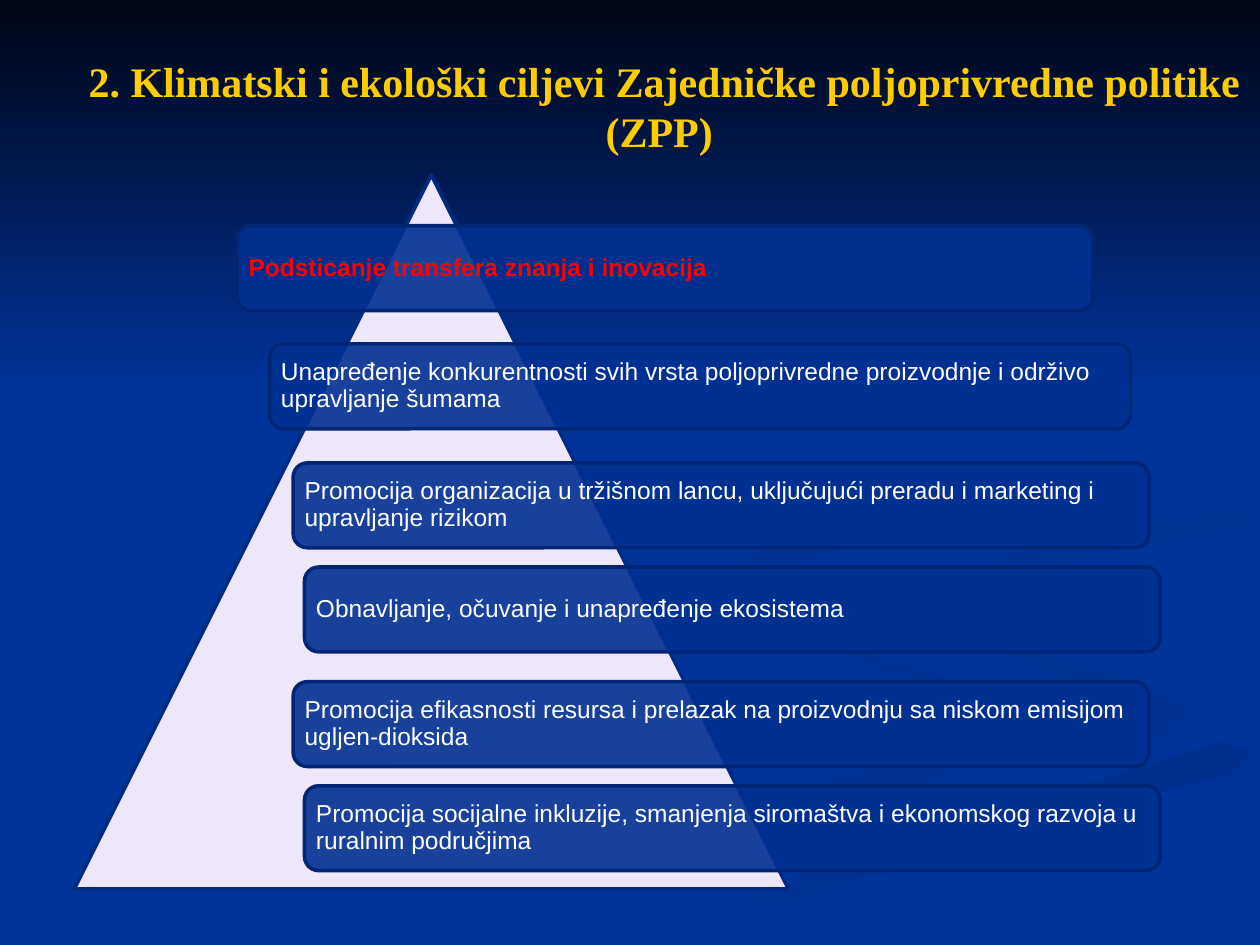
from collections import namedtuple
from itertools import pairwise
from math import hypot

from lxml.etree import SubElement
from pptx import Presentation
from pptx.dml.color import RGBColor
from pptx.enum.shapes import MSO_SHAPE as Preset
from pptx.enum.text import MSO_ANCHOR as Anchor, PP_ALIGN as Align
from pptx.oxml.ns import qn
from pptx.util import Pt

SLIDE_WIDTH, SLIDE_HEIGHT = 720, 540
SKY_HEIGHT = 222
PYRAMID_LEFT, PYRAMID_TOP, PYRAMID_SIZE = 42.5, 100, 408
GOAL_WIDTH, GOAL_HEIGHT, GOAL_INSET = 489, 48.5, 4.2
CURVE_STEPS = 6

COLORS = {
    "field": "003399", "night": "000514", "title": "FFCC00",
    "pyramid": "EEE7F9", "pyramid_edge": "002B82",
    "goal": "003091", "goal_edge": "002673",
    "text": "FFFFFF", "accent": "FF0000",
    "swirl": "003193", "band": "002F8C", "ripple": "003091", "wave": "002F8E",
}

Station = namedtuple("Station", "x y thickness")
Ribbon = namedtuple("Ribbon", "first last angle stations")
Goal = namedtuple("Goal", "left top text width color bold",
                  defaults=(GOAL_WIDTH, "text", False))

INNER_SWIRL = Ribbon("field", "swirl", 0, [
    (414, 331, 1), (416, 343, 5), (482, 371, 4), (555, 395, 5),
    (571, 410, 10), (520, 442, 14), (400, 474, 18), (245, 528, 22)])
OUTER_SWIRL = Ribbon("field", "swirl", 45, [
    (522, 334, 1), (530, 352, 6), (590, 376, 10),
    (655, 398, 12), (668, 416, 18), (646, 436, 1)])
LOWER_BAND = Ribbon("band", "field", 90, [
    (386, 530, 10), (470, 500, 18), (575, 467, 18), (715, 429, 20)])
PLAIN_RIBBON = Ribbon("field", "field", 0, [
    (370, 528, 16), (500, 478, 12), (650, 432, 12), (695, 403, 30),
    (650, 382, 16), (560, 354, 16), (543, 331, 36), (580, 307, 14), (715, 284, 10)])
RIPPLE = Ribbon("ripple", "field", 45, [
    (590, 354, 1), (570, 338, 12), (585, 322, 12), (640, 308, 12), (715, 296, 12)])
WAVE = Ribbon("wave", "field", 45, [
    (552, 170, 1), (615, 207, 4), (641, 243, 4), (605, 278, 8),
    (510, 300, 10), (445, 318, 14), (422, 337, 10), (442, 356, 1)])
RIBBONS = [INNER_SWIRL, OUTER_SWIRL, LOWER_BAND, PLAIN_RIBBON, RIPPLE, WAVE]

TITLE = "2. Klimatski i ekološki ciljevi Zajedničke poljoprivredne politike (ZPP) "
GOALS = [
    Goal(135.5, 129, "Podsticanje transfera znanja i inovacija", color="accent", bold=True),
    Goal(154, 196.5, "Unapređenje konkurentnosti svih vrsta poljoprivredne proizvodnje "
                     "i održivo upravljanje šumama", width=492),
    Goal(167.5, 264.5, "Promocija organizacija u tržišnom lancu, uključujući preradu "
                       "i marketing i upravljanje rizikom"),
    Goal(174, 324, "Obnavljanje, očuvanje i unapređenje ekosistema"),
    Goal(167.5, 389.5, "Promocija efikasnosti resursa i prelazak na proizvodnju "
                       "sa niskom emisijom ugljen-dioksida"),
    Goal(174, 449, "Promocija socijalne inkluzije, smanjenja siromaštva "
                   "i ekonomskog razvoja u ruralnim područjima"),
]


def rgb(name):
    """Return the named colour."""
    return RGBColor.from_string(COLORS[name])


def spline(before, start, end, after, t):
    """Return the Catmull-Rom value between start and end at t from 0 to 1."""
    return start + t / 2 * (end - before + t * (
        2 * before - 5 * start + 4 * end - after + t * (3 * (start - end) + after - before)))


def smooth(stations):
    """Return a smooth curve of stations through the given ones."""
    padded = [stations[0], *stations, stations[-1]]
    curve = []
    for index in range(len(stations) - 1):
        for step in range(CURVE_STEPS):
            values = zip(*padded[index:index + 4])
            curve.append(Station(*(spline(*four, step / CURVE_STEPS) for four in values)))
    return curve + [Station(*stations[-1])]


def ribbon_outline(stations):
    """Return the outline at half the thickness on both sides of the curve."""
    curve = smooth(stations)
    near_side, far_side = [], []
    for here, ahead in pairwise(curve):
        dx, dy = ahead.x - here.x, ahead.y - here.y
        reach = here.thickness / 2 / hypot(dx, dy)
        near_side.append((here.x - dy * reach, here.y + dx * reach))
        far_side.append((here.x + dy * reach, here.y - dx * reach))
    tip = (curve[-1].x, curve[-1].y)
    return near_side + [tip] + far_side[::-1]


def paint(shape, first, last, angle):
    """Fill a shape without an edge, with a gradient if its two colours differ."""
    shape.shadow.inherit = False
    shape.line.fill.background()
    if first == last:
        shape.fill.solid()
        shape.fill.fore_color.rgb = rgb(first)
        return
    shape.fill.gradient()
    shape.fill.gradient_angle = -angle % 360
    for stop, name in zip(shape.fill.gradient_stops, (first, last)):
        stop.color.rgb = rgb(name)


def add_ribbon(slide, ribbon):
    """Add one curved ribbon of the backdrop."""
    start, *rest = ribbon_outline(ribbon.stations)
    builder = slide.shapes.build_freeform(*start, scale=Pt(1))
    builder.add_line_segments(rest, close=True)
    paint(builder.convert_to_shape(), ribbon.first, ribbon.last, ribbon.angle)


def add_backdrop(slide):
    """Add the plain field, the ribbons and the night sky above them."""
    slide.background.fill.solid()
    slide.background.fill.fore_color.rgb = rgb("field")
    for ribbon in RIBBONS:
        add_ribbon(slide, ribbon)
    sky = slide.shapes.add_shape(Preset.RECTANGLE, 0, 0, Pt(SLIDE_WIDTH), Pt(SKY_HEIGHT))
    paint(sky, "night", "field", 90)


def add_run(paragraph, text, font, size, color, bold):
    """Append a formatted run to the paragraph."""
    run = paragraph.add_run()
    run.text = text
    run.font.name, run.font.size, run.font.bold = font, Pt(size), bold
    run.font.color.rgb = rgb(color)


def add_title(slide):
    """Bring the title placeholder in front of the backdrop and fill it."""
    title = slide.shapes.title
    slide.shapes.element.append(title.element)
    title.left, title.top, title.width, title.height = map(Pt, (42.5, 15, 674.5, 91))
    title.text_frame.vertical_anchor = Anchor.MIDDLE
    title.text_frame.word_wrap = True
    heading = title.text_frame.paragraphs[0]
    heading.alignment = Align.CENTER
    add_run(heading, TITLE, "Times New Roman", 24, "title", True)


def add_panel(slide, preset, box, fill, edge):
    """Add a filled and outlined preset shape."""
    panel = slide.shapes.add_shape(preset, *map(Pt, box))
    panel.shadow.inherit = False
    panel.fill.solid()
    panel.fill.fore_color.rgb = rgb(fill)
    panel.line.color.rgb = rgb(edge)
    panel.line.width = Pt(2)
    return panel


def add_goal(slide, goal):
    """Add one translucent goal bar with its text."""
    box = (goal.left, goal.top, goal.width, GOAL_HEIGHT)
    bar = add_panel(slide, Preset.ROUNDED_RECTANGLE, box, "goal", "goal_edge")
    fill_color = bar.element.spPr.find(qn("a:solidFill"))[0]
    SubElement(fill_color, qn("a:alpha"), val="90000")
    frame = bar.text_frame
    frame.word_wrap = True
    frame.vertical_anchor = Anchor.MIDDLE
    frame.margin_left = frame.margin_right = Pt(GOAL_INSET)
    frame.margin_top = frame.margin_bottom = Pt(GOAL_INSET)
    statement = frame.paragraphs[0]
    statement.alignment = Align.LEFT
    statement.line_spacing = 0.9
    add_run(statement, goal.text, "Arial", 14, goal.color, goal.bold)


def main():
    """Build the slide and save it."""
    deck = Presentation()
    deck.slide_width, deck.slide_height = Pt(SLIDE_WIDTH), Pt(SLIDE_HEIGHT)
    slide = deck.slides.add_slide(deck.slide_layouts[5])
    add_backdrop(slide)
    add_title(slide)
    pyramid_box = (PYRAMID_LEFT, PYRAMID_TOP, PYRAMID_SIZE, PYRAMID_SIZE)
    add_panel(slide, Preset.ISOSCELES_TRIANGLE, pyramid_box, "pyramid", "pyramid_edge")
    for goal in GOALS:
        add_goal(slide, goal)
    deck.save("out.pptx")


if __name__ == "__main__":
    main()
